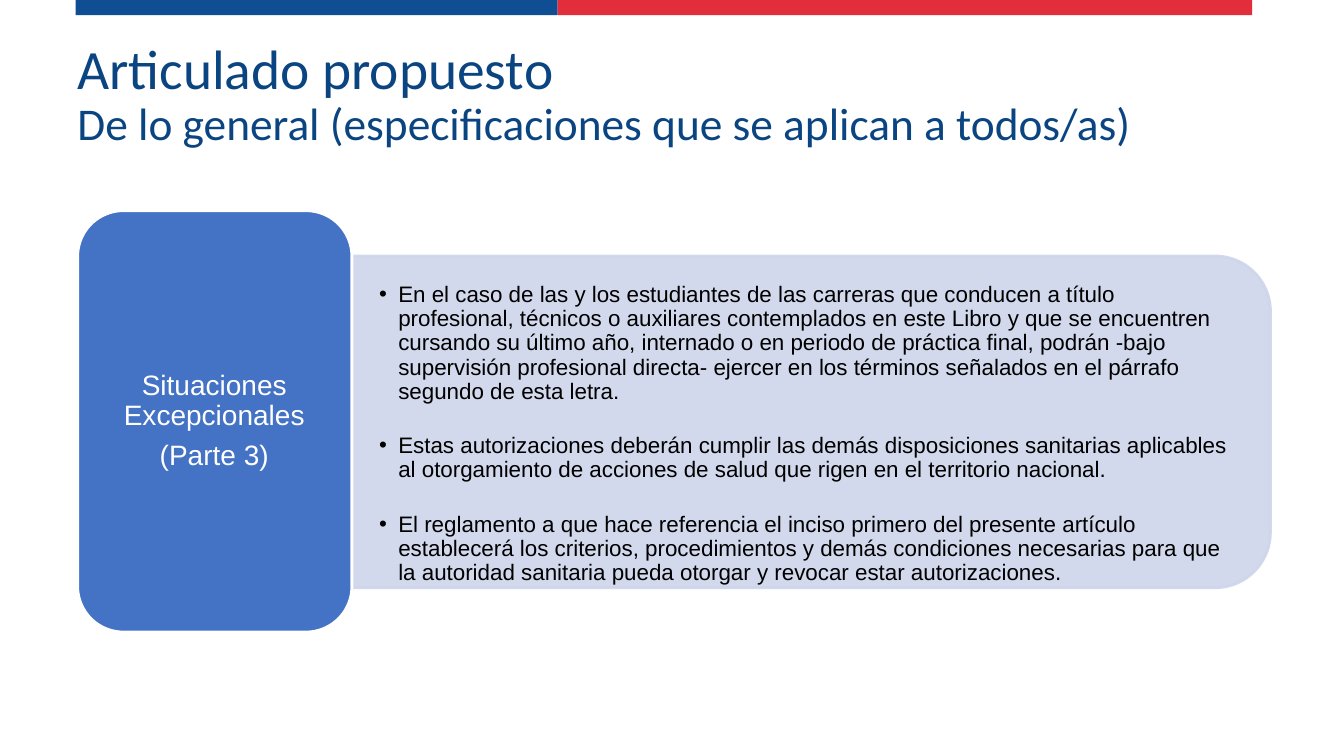
from lxml.etree import SubElement
from pptx import Presentation
from pptx.dml.color import RGBColor
from pptx.enum.shapes import MSO_SHAPE
from pptx.enum.text import MSO_ANCHOR, PP_ALIGN
from pptx.oxml.ns import qn
from pptx.util import Inches, Pt

COLORS = {
    "blue": "0F4E93",
    "red": "E22D3B",
    "title": "0B4581",
    "panel": "CFD5EA",
    "label": "4472C4",
    "white": "FFFFFF",
    "black": "000000",
}

TITLE = [
    ("Articulado propuesto", 39.6),
    ("De lo general (especificaciones que se aplican a todos/as)", 32.4),
]
LABEL = ["Situaciones Excepcionales", "(Parte 3)"]
POINTS = [
    "En el caso de las y los estudiantes de las carreras que conducen a título "
    "profesional, técnicos o auxiliares contemplados en este Libro y que se "
    "encuentren cursando su último año, internado o en periodo de práctica final, "
    "podrán -bajo supervisión profesional directa- ejercer en los términos "
    "señalados en el párrafo segundo de esta letra.",
    "Estas autorizaciones deberán cumplir las demás disposiciones sanitarias "
    "aplicables al otorgamiento de acciones de salud que rigen en el territorio "
    "nacional.",
    "El reglamento a que hace referencia el inciso primero del presente artículo "
    "establecerá los criterios, procedimientos y demás condiciones necesarias para "
    "que la autoridad sanitaria pueda otorgar y revocar estar autorizaciones.",
]


def rgb(name):
    return RGBColor.from_string(COLORS[name])


def set_alpha(fill, percent):
    for color in fill.iter(qn("a:srgbClr")):
        SubElement(color, qn("a:alpha"), val=str(percent * 1000))


def add_block(s, kind, box, fill, line=None, rotation=0, alpha=None):
    sp = s.shapes.add_shape(kind, *map(Inches, box))
    sp.shadow.inherit = False
    sp.rotation = rotation
    sp.fill.solid()
    sp.fill.fore_color.rgb = rgb(fill)
    if line:
        sp.line.color.rgb = rgb(line)
        sp.line.width = Pt(2)
    else:
        sp.line.fill.background()
    if alpha:
        set_alpha(sp._element.spPr, alpha)
    return sp


def add_text_box(s, box, insets, anchor=MSO_ANCHOR.MIDDLE):
    tf = s.shapes.add_textbox(*map(Inches, box)).text_frame
    tf.word_wrap = True
    tf.vertical_anchor = anchor
    tf.margin_left = tf.margin_right = Inches(insets[0])
    tf.margin_top = tf.margin_bottom = Inches(insets[1])
    return tf


def add_run(p, text, size, color, font="Arial"):
    r = p.add_run()
    r.text = text
    r.font.size = Pt(size)
    r.font.name = font
    r.font.color.rgb = rgb(color)


def add_bullet(p, indent):
    pPr = p._p.get_or_add_pPr()
    pPr.set("marL", str(Inches(indent)))
    pPr.set("indent", str(-Inches(indent)))
    SubElement(pPr, qn("a:buFont"), typeface="Arial")
    SubElement(pPr, qn("a:buChar"), char="•")


def write(tf, text, size, color, after=0, align=PP_ALIGN.LEFT, indent=None):
    """Write one paragraph per item of text."""
    for i, item in enumerate(text):
        p = tf.add_paragraph() if i else tf.paragraphs[0]
        p.alignment = align
        p.line_spacing = 0.9
        p.space_after = Pt(after)
        if indent:
            add_bullet(p, indent)
        add_run(p, item, size, color)


def add_title(s):
    tf = add_text_box(s, (0.67, 0.35, 11.5, 1.2), (0.1, 0.05))
    p = tf.paragraphs[0]
    p.line_spacing = 0.9
    for i, (text, size) in enumerate(TITLE):
        if i:
            p.add_line_break()
        add_run(p, text, size, "title", font="Calibri")


def main():
    prs = Presentation()
    prs.slide_width, prs.slide_height = Inches(13.33), Inches(7.5)
    s = prs.slides.add_slide(prs.slide_layouts[6])

    # Top band and title
    add_block(s, MSO_SHAPE.RECTANGLE, (0.75, 0, 4.78, 0.15), "blue")
    add_block(s, MSO_SHAPE.RECTANGLE, (5.53, 0, 6.89, 0.15), "red")
    add_title(s)

    # Panel with the provisions
    add_block(s, MSO_SHAPE.ROUND_2_SAME_RECTANGLE, (6.4, -0.37, 3.29, 9.11),
              "panel", line="panel", rotation=90, alpha=90)
    tf = add_text_box(s, (3.49, 2.81, 8.95, 3.02), (0.27, 0), MSO_ANCHOR.TOP)
    write(tf, POINTS, 16, "black", after=21.6, indent=0.19)

    # Label on the left
    add_block(s, MSO_SHAPE.ROUNDED_RECTANGLE, (0.77, 2.09, 2.72, 4.18),
              "label", line="white")
    tf = add_text_box(s, (0.9, 2.22, 2.45, 3.92), (0.08, 0.04))
    write(tf, LABEL, 20, "white", after=7, align=PP_ALIGN.CENTER)

    prs.save("out.pptx")


if __name__ == "__main__":
    main()
